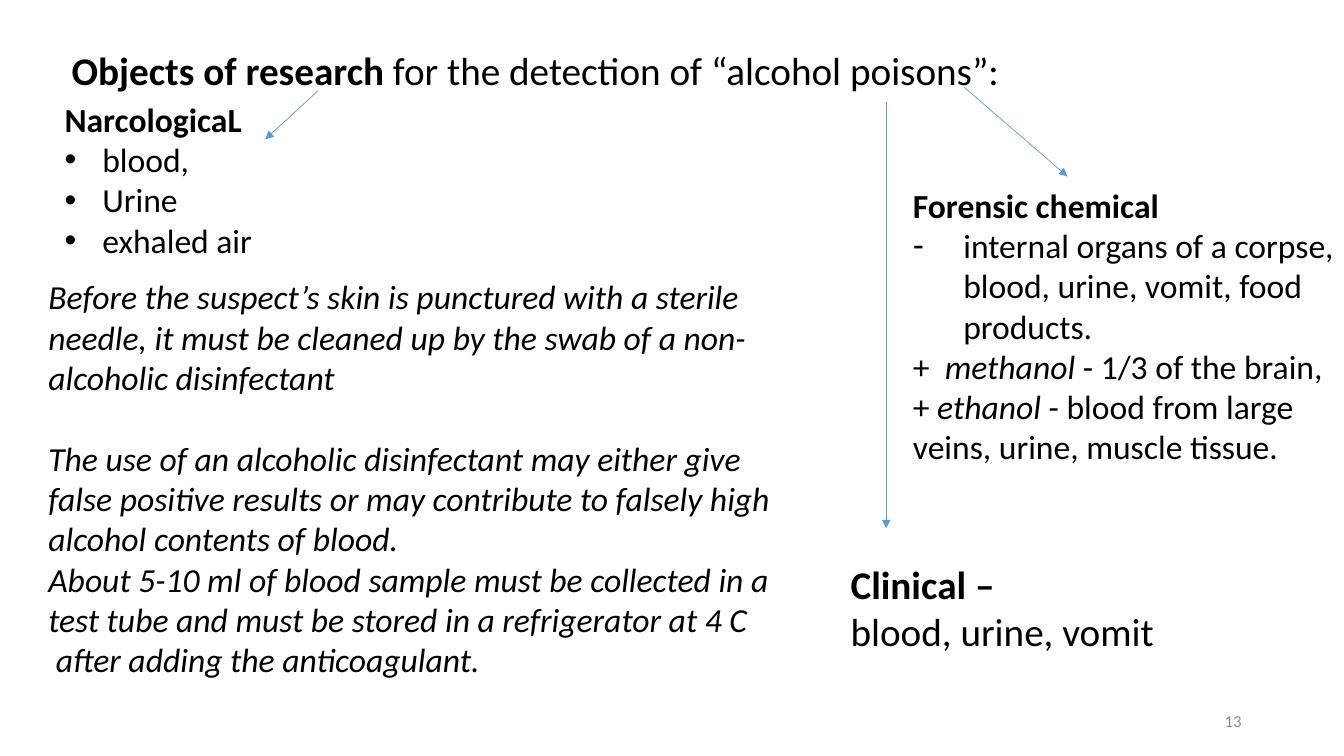
from lxml import etree
from pptx import Presentation
from pptx.dml.color import RGBColor
from pptx.enum import shapes, text
from pptx.oxml.ns import qn
from pptx.util import Pt

FONT = "Calibri"
BLACK, GREY, BLUE = "000000", "8C8C8C", "5B9BD5"


def colour(hex_string):
    return RGBColor.from_string(hex_string)


def place(shape, box):
    shape.left, shape.top, shape.width, shape.height = map(Pt, box)


def add_bullet(paragraph, character, indent):
    properties = paragraph._p.get_or_add_pPr()
    properties.set("marL", str(Pt(indent)))
    properties.set("indent", str(-Pt(indent)))
    etree.SubElement(properties, qn("a:buFont")).set("typeface", "Arial")
    etree.SubElement(properties, qn("a:buChar")).set("char", character)


def write_paragraph(paragraph, runs, size, bold=None, italic=None, tint=BLACK):
    """Write runs given as (wording, style), where style is "", "b" or "i"."""
    for wording, style in runs:
        run = paragraph.add_run()
        run.text = wording
        if style == "b":
            run.font.bold = True
        elif style == "i":
            run.font.italic = True
    font = paragraph.font
    font.name, font.size = FONT, Pt(size)
    font.bold, font.italic = bold, italic
    font.color.rgb = colour(tint)


def add_text_box(slide, box, wrap=True):
    shape = slide.shapes.add_textbox(*map(Pt, box))
    shape.text_frame.word_wrap = wrap
    return shape.text_frame


def add_heading(slide, box):
    title = slide.shapes.title
    place(title, box)
    frame = title.text_frame
    frame.auto_size = text.MSO_AUTO_SIZE.NONE
    frame.vertical_anchor = text.MSO_ANCHOR.TOP
    paragraph = frame.paragraphs[0]
    paragraph.alignment = text.PP_ALIGN.LEFT
    write_paragraph(paragraph, [
        ("Objects of research ", "b"),
        ("for the detection of “alcohol poisons”:", ""),
    ], 28)


def add_field(slide, box, name, entries, size=24, wrap=True):
    """Add a bold field name over entries of (runs, bullet, indent)."""
    frame = add_text_box(slide, box, wrap)
    write_paragraph(frame.paragraphs[0], [(name, "")], size, bold=True)
    for runs, bullet, indent in entries:
        paragraph = frame.add_paragraph()
        if bullet:
            add_bullet(paragraph, bullet, indent)
        write_paragraph(paragraph, runs, size)


def add_sampling_rules(slide, box, rules):
    """Add italic paragraphs of (wording, space before)."""
    frame = add_text_box(slide, box)
    for index, (wording, space) in enumerate(rules):
        paragraph = frame.add_paragraph() if index else frame.paragraphs[0]
        if space:
            paragraph.space_before = Pt(space)
        write_paragraph(paragraph, [(wording, "")], 24, italic=True)


def add_arrow(slide, start, end):
    arrow = slide.shapes.add_connector(
        shapes.MSO_CONNECTOR.STRAIGHT, *map(Pt, start + end))
    arrow.line.color.rgb = colour(BLUE)
    arrow.line.width = Pt(0.5)
    etree.SubElement(arrow.line._get_or_add_ln(), qn("a:tailEnd")).set("type", "triangle")
    etree.SubElement(arrow._element.spPr, qn("a:effectLst"))


def add_page_number(slide, box, number):
    frame = add_text_box(slide, box)
    frame.vertical_anchor = text.MSO_ANCHOR.MIDDLE
    paragraph = frame.paragraphs[0]
    paragraph.alignment = text.PP_ALIGN.RIGHT
    write_paragraph(paragraph, [(number, "")], 12, tint=GREY)


def main():
    presentation = Presentation()
    presentation.slide_width, presentation.slide_height = Pt(960), Pt(540)
    slide = presentation.slides.add_slide(presentation.slide_layouts[5])

    add_page_number(slide, (678, 500.5, 216, 28.8), "13")
    add_heading(slide, (44, 29.5, 892, 70.5))
    add_field(slide, (39, 67, 168, 124), "NarcologicaL", [
        ([(sample, "")], "•", 27) for sample in ("blood,", "Urine", "exhaled air")
    ])
    add_field(slide, (600.5, 396.7, 233.3, 75), "Clinical –", [
        ([("blood, urine, vomit", "")], None, 0),
    ], size=28, wrap=False)
    add_field(slide, (645, 128.2, 315.4, 240), "Forensic chemical", [
        ([("internal organs of a corpse, blood, urine, vomit, food products.", "")], "-", 36),
        ([("+  ", ""), ("methanol ", "i"), ("- 1/3 of the brain,", "")], None, 0),
        ([("+ ", ""), ("ethanol", "i"),
          (" - blood from large veins, urine, muscle tissue.", "")], None, 0),
    ])
    add_sampling_rules(slide, (27.4, 193.7, 550.8, 303), [
        ("Before the suspect’s skin is punctured with a sterile needle, it must be "
         "cleaned up by the swab of a non-alcoholic disinfectant", 0),
        ("The use of an alcoholic disinfectant may either give false positive results "
         "or may contribute to falsely high alcohol contents of blood.", 29),
        ("About 5-10 ml of blood sample must be collected in a test tube and must be "
         "stored in a refrigerator at 4 C", 0),
        (" after adding the anticoagulant.", 0),
    ])
    for start, end in (
        ((227, 65), (189.5, 99.5)),
        ((633, 72.7), (633, 377.3)),
        ((688.3, 62), (762.5, 126)),
    ):
        add_arrow(slide, start, end)

    presentation.save("out.pptx")


if __name__ == "__main__":
    main()
